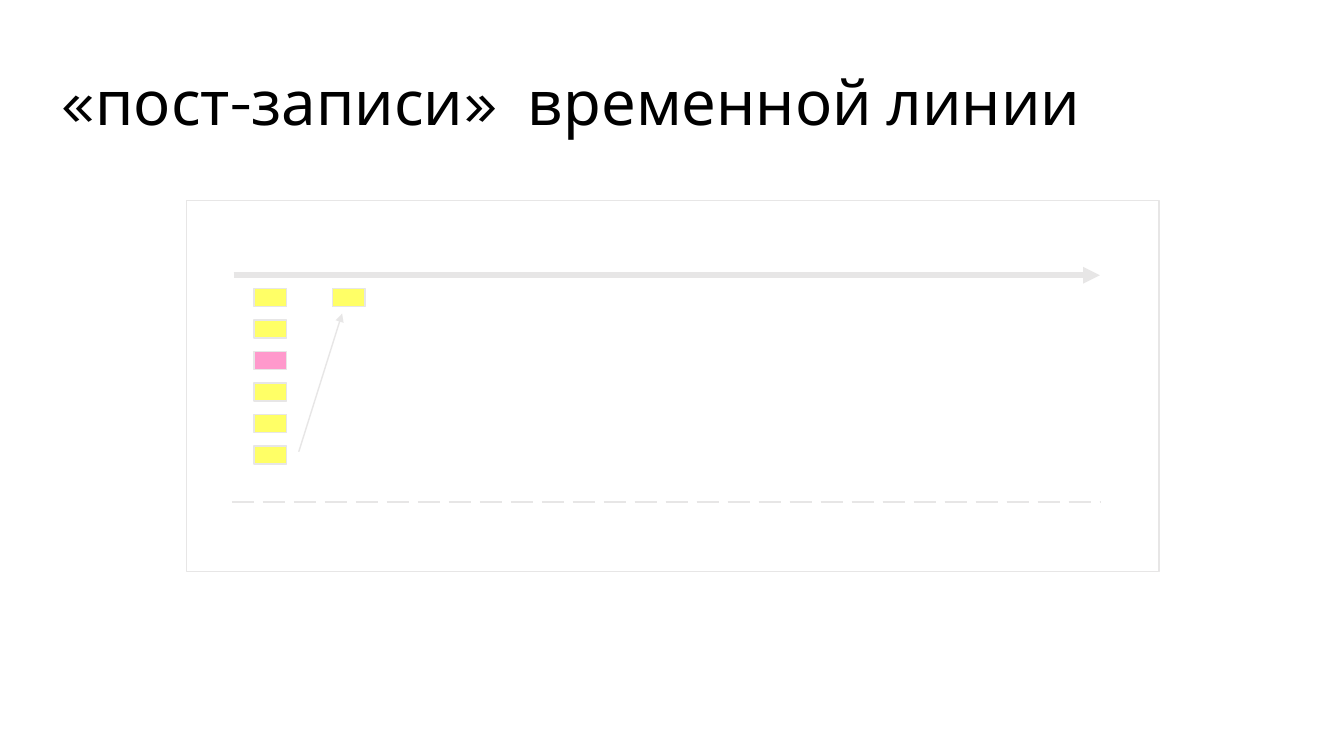
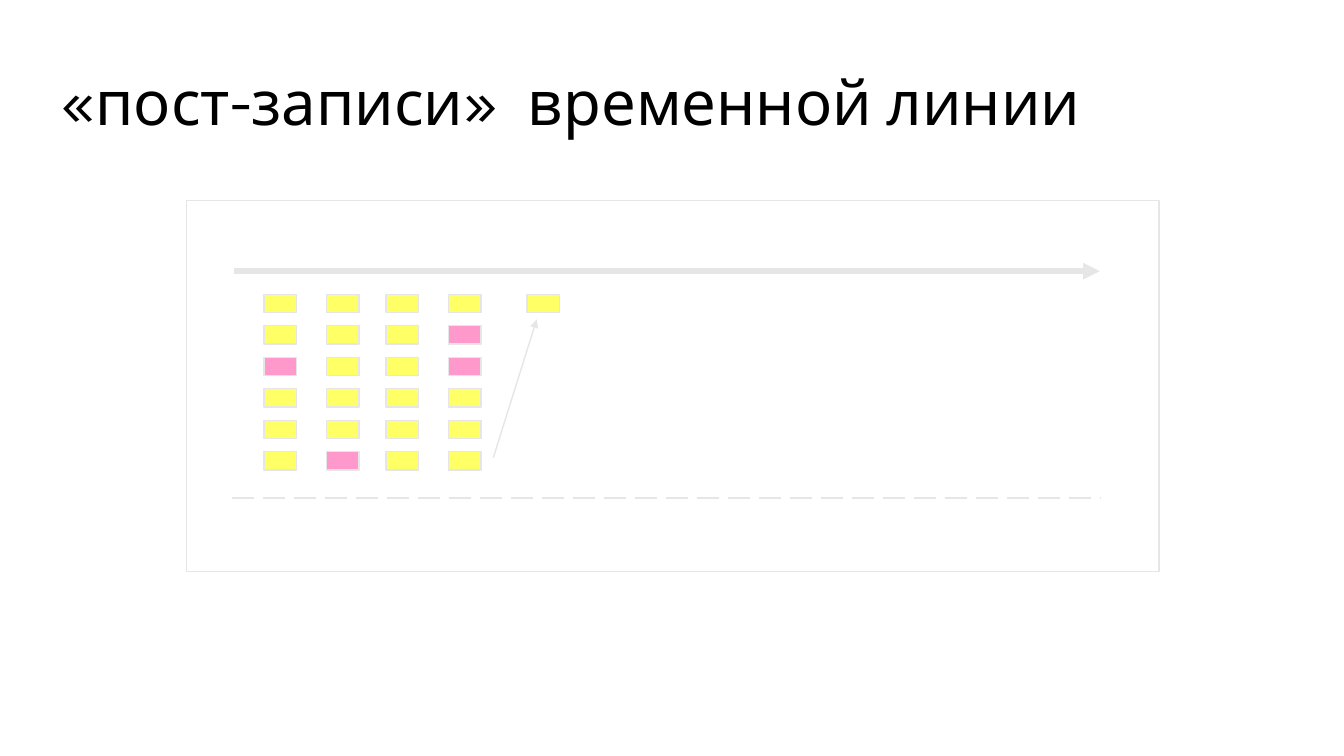
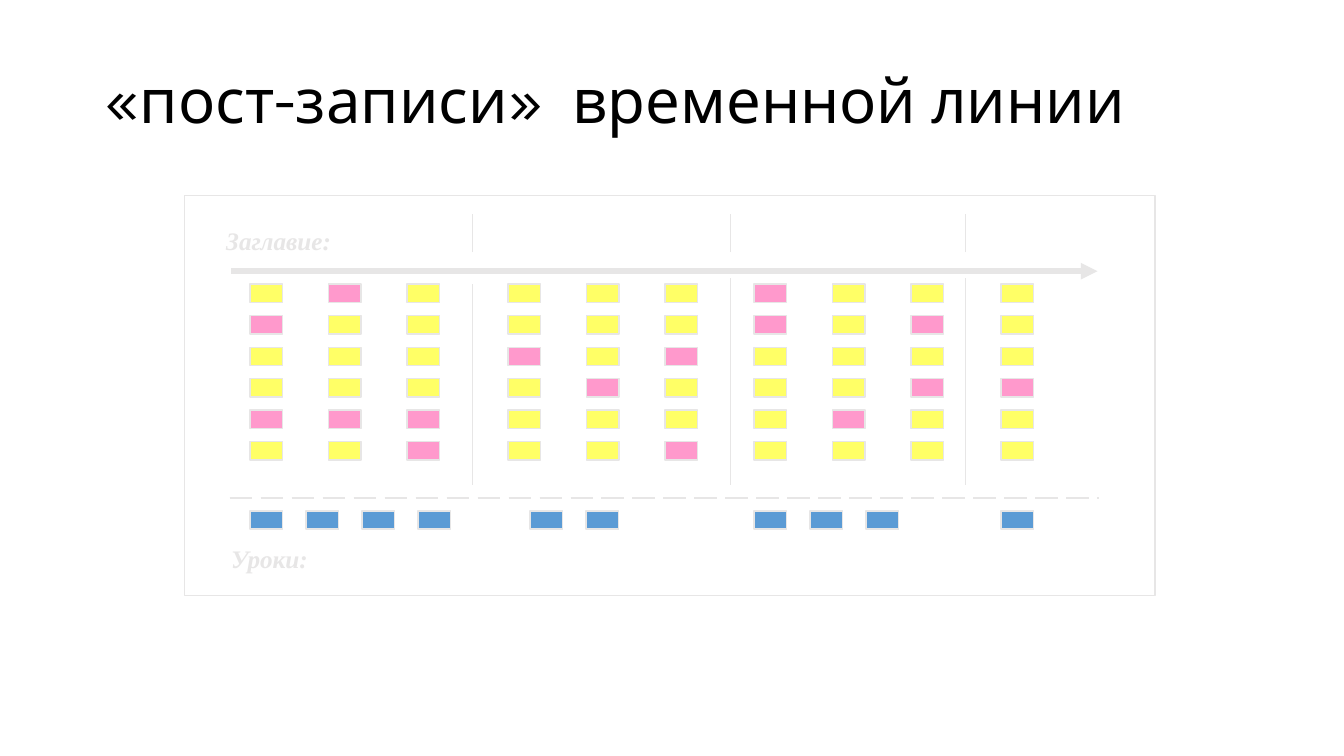
from lxml.etree import SubElement
from pptx import Presentation
from pptx.dml.color import RGBColor
from pptx.enum.dml import MSO_LINE_DASH_STYLE as Dash
from pptx.enum.shapes import MSO_CONNECTOR_TYPE as Connector, MSO_SHAPE as Shape
from pptx.enum.text import MSO_ANCHOR as Anchor
from pptx.oxml.ns import qn
from pptx.util import Pt

BLACK = RGBColor(0x00, 0x00, 0x00)
WHITE = RGBColor(0xFF, 0xFF, 0xFF)
GREY = RGBColor(0xE7, 0xE6, 0xE6)
YELLOW = RGBColor(0xFF, 0xFF, 0x66)
PINK = RGBColor(0xFF, 0x99, 0xCC)
BLUE = RGBColor(0x5B, 0x9B, 0xD5)
NOTE_COLORS = {"y": YELLOW, "p": PINK}

TITLE = "«пост-записи»  временной линии"
NOTE_WIDTH, NOTE_HEIGHT = 23.3, 13
ROW_STEP = 22.5
COLUMN_STEP = 56.1
LESSON_STEP = 40


def add_text(slide, text, left, top, width, height, *, font, size, color,
             bold=False, italic=False, inset=(0, 0), anchor=Anchor.TOP, spacing=1.0):
    """Add a one-paragraph text box with the given format."""
    frame = slide.shapes.add_textbox(Pt(left), Pt(top), Pt(width), Pt(height)).text_frame
    frame.word_wrap = True
    frame.vertical_anchor = anchor
    frame.margin_left = frame.margin_right = Pt(inset[0])
    frame.margin_top = frame.margin_bottom = Pt(inset[1])
    paragraph = frame.paragraphs[0]
    paragraph.line_spacing = spacing
    run = paragraph.add_run()
    run.text = text
    run.font.name = font
    run.font.size = Pt(size)
    run.font.bold = bold
    run.font.italic = italic
    run.font.color.rgb = color


def add_title(slide, left=36, top=23.8):
    """Add the slide title."""
    add_text(slide, TITLE, left, top, 747.4, 103, font="Karla", size=44, color=BLACK,
             inset=(7.2, 3.6), anchor=Anchor.MIDDLE, spacing=0.9)


def add_label(slide, text, left, top):
    """Add a caption inside the board."""
    add_text(slide, text, left, top, 140, 21, font="Times New Roman", size=18,
             color=GREY, bold=True, italic=True)


def add_box(slide, left, top, width, height, fill):
    """Add a filled rectangle with a thin grey outline."""
    box = slide.shapes.add_shape(Shape.RECTANGLE, Pt(left), Pt(top), Pt(width), Pt(height))
    box.shadow.inherit = False
    box.fill.solid()
    box.fill.fore_color.rgb = fill
    box.line.color.rgb = GREY
    box.line.width = Pt(1)


def add_line(slide, start, end, weight=1, dash=None, arrow=False):
    """Add a grey straight line, optionally dashed or with an arrowhead."""
    line = slide.shapes.add_connector(Connector.STRAIGHT, *map(Pt, (*start, *end)))
    line.line.color.rgb = GREY
    line.line.width = Pt(weight)
    if dash:
        line.line.dash_style = dash
    properties = line.element.spPr
    if arrow:
        SubElement(properties.find(qn("a:ln")), qn("a:tailEnd"), type="triangle")
    SubElement(properties, qn("a:effectLst"))


def add_board(slide, axis_y, left=133.2, top=143.3, width=694.8, height=265):
    """Add the frame with the time arrow and the dashed line below it."""
    add_box(slide, left, top, width, height, WHITE)
    add_line(slide, (left + 33.6, axis_y), (left + 652.4, axis_y), 4, arrow=True)
    dash_y = axis_y + 162
    add_line(slide, (left + 32.4, dash_y), (left + 653.4, dash_y), 2, dash=Dash.LONG_DASH)


def add_note(slide, left, top, fill):
    """Add one sticky note."""
    add_box(slide, left, top, NOTE_WIDTH, NOTE_HEIGHT, fill)


def add_column(slide, left, top, colors):
    """Add a column of notes, one for each letter of the colour code."""
    for row, code in enumerate(colors):
        add_note(slide, left, top + row * ROW_STEP, NOTE_COLORS[code])


def add_next_column(slide, last_left, top):
    """Add the first note of the next column and the arrow leading to it."""
    add_note(slide, last_left + COLUMN_STEP, top, YELLOW)
    add_line(slide, (last_left + 32, top + 116.7), (last_left + 63, top + 18), arrow=True)


def build_first_column(slide):
    """Show the first filled column."""
    left, top = 181.4, 206
    add_title(slide)
    add_board(slide, 196.6)
    add_column(slide, left, top, "yypyyy")
    add_next_column(slide, left, top)


def build_more_columns(slide):
    """Show four filled columns."""
    top = 210.2
    columns = {188.6: "yypyyy", 233.3: "yyyyyp", 275.8: "yyyyyy", 320.4: "yppyyy"}
    add_board(slide, 193.7)
    for left, colors in columns.items():
        add_column(slide, left, top, colors)
    add_next_column(slide, max(columns), top)
    add_title(slide)


def build_full_timeline(slide):
    """Show the whole timeline in titled periods with lessons."""
    first_left = 178.6
    periods = {
        first_left: ("ypyypy", "pyyypy", "yyyypp"),
        362.9: ("yypyyy", "yyypyy", "yypyyp"),
        538.6: ("ppyyyy", "yyyypy", "ypypyy"),
        715: ("yyypyy",),
    }
    add_board(slide, 193.7, 131.6, 139.7, 693.4, 285.8)
    for period_left, columns in periods.items():
        for index, colors in enumerate(columns):
            add_column(slide, period_left + index * COLUMN_STEP, 203, colors)
    for x, top in ((337.7, 203), (522, 198.7), (689.8, 198.7)):
        add_line(slide, (x, top), (x, 346.3))
        add_line(slide, (x, 180), (x, 152.6))
    lesson_lefts = [first_left + slot * LESSON_STEP for slot in (0, 1, 2, 3, 5, 6, 9, 10, 11)]
    for left in (*lesson_lefts, max(periods)):
        add_note(slide, left, 365, BLUE)
    add_label(slide, "Заглавие:", 161.6, 161)
    add_label(slide, "Уроки:", 165, 388.3)
    add_title(slide, 67.7, 22.3)


def main():
    """Build and save the presentation."""
    deck = Presentation()
    deck.slide_width, deck.slide_height = Pt(960), Pt(540)
    for build in (build_first_column, build_more_columns, build_full_timeline):
        build(deck.slides.add_slide(deck.slide_layouts[6]))
    deck.save("out.pptx")


if __name__ == "__main__":
    main()
